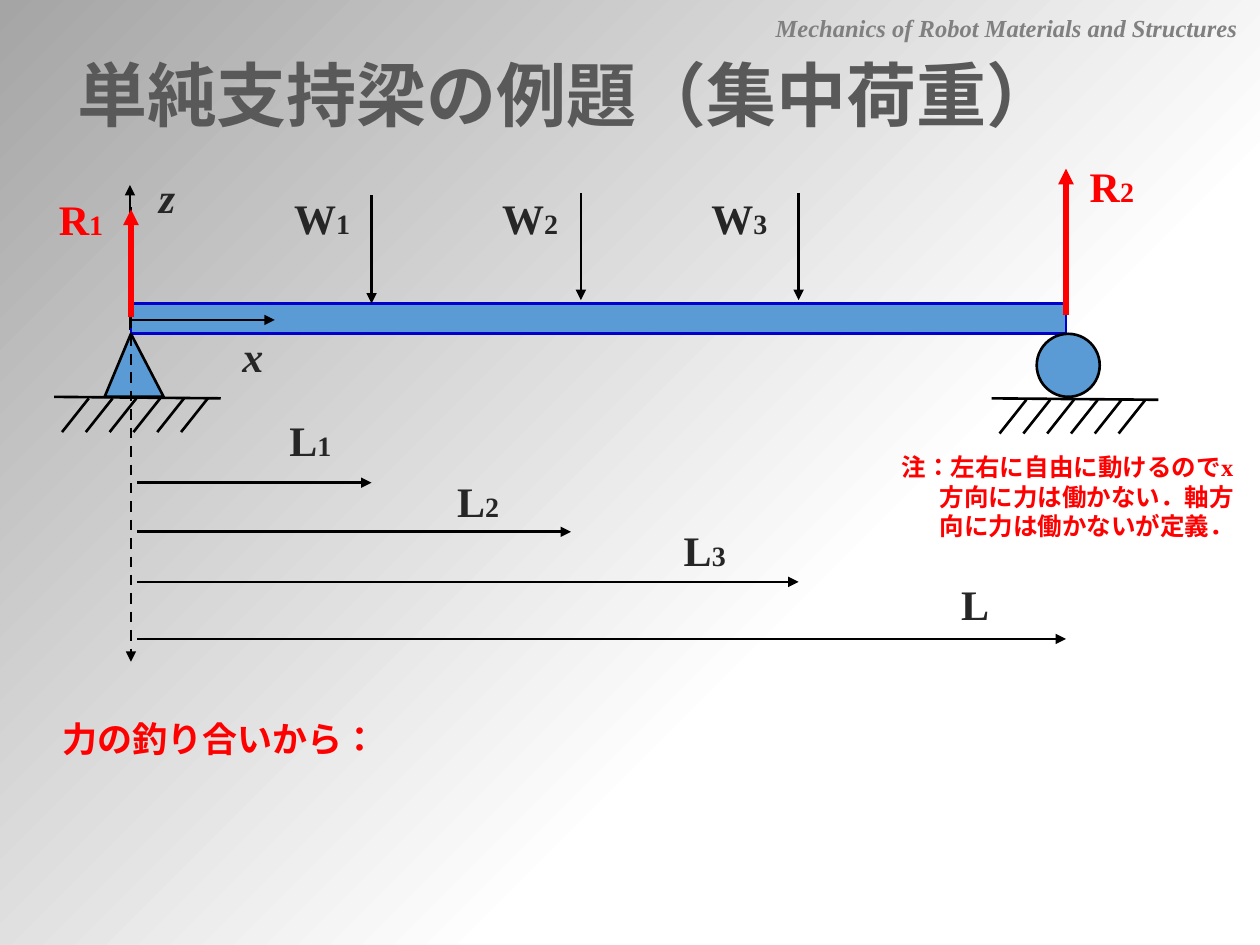
from lxml import etree
from pptx import Presentation
from pptx.dml.color import RGBColor
from pptx.enum.dml import MSO_LINE
from pptx.enum.lang import MSO_LANGUAGE_ID
from pptx.enum.shapes import MSO_CONNECTOR, MSO_SHAPE
from pptx.enum.text import MSO_ANCHOR, MSO_AUTO_SIZE, PP_ALIGN
from pptx.oxml import parse_xml
from pptx.oxml.ns import nsdecls, qn
from pptx.util import Cm, Pt

LEFT, MID, RIGHT = PP_ALIGN.LEFT, PP_ALIGN.CENTER, PP_ALIGN.RIGHT
RECT, OVAL = MSO_SHAPE.RECTANGLE, MSO_SHAPE.OVAL
DASH = MSO_LINE.DASH
STRAIGHT = MSO_CONNECTOR.STRAIGHT
MIDDLE = MSO_ANCHOR.MIDDLE
FIXED = MSO_AUTO_SIZE.NONE
JAPAN = MSO_LANGUAGE_ID.JAPANESE

COLORS = {
    "black": "000000", "ink": "262626", "title": "595959", "head": "808080",
    "red": "FF0000", "steel": "5B9BD5", "edge": "0000CC",
    "white": "FFFFFF", "shade": "A5A5A5",
}


def color(name):
    return RGBColor.from_string(COLORS[name])


class Board:
    """Holds the style and the slide being drawn; all lengths are in cm."""

    font = "Times New Roman"
    thin, thick = 1.5, 3

    def __init__(self, slide):
        self.slide = slide
        self.shapes = slide.shapes

    def back(self):
        """Fade from grey at the top left to white at the bottom right."""
        fill = self.slide.background.fill
        fill.solid()
        solid = self.slide._element.find(".//" + qn("a:solidFill"))
        white, shade = COLORS["white"], COLORS["shade"]
        grad = parse_xml(
            f'<a:gradFill rotWithShape="1" {nsdecls("a")}><a:gsLst>'
            f'<a:gs pos="0"><a:srgbClr val="{white}"><a:alpha val="70000"/></a:srgbClr></a:gs>'
            f'<a:gs pos="35000"><a:srgbClr val="{white}"/></a:gs>'
            f'<a:gs pos="100000"><a:srgbClr val="{shade}"/></a:gs></a:gsLst>'
            '<a:path path="circle"><a:fillToRect l="100000" t="100000"/></a:path>'
            '</a:gradFill>')
        solid.getparent().replace(solid, grad)

    def run(self, para, text, size, hue, face=None, slant=False):
        run = para.add_run()
        run.text = text
        font = run.font
        font.name, font.size = face or self.font, Pt(size)
        font.bold, font.italic = True, slant
        font.color.rgb = color(hue)
        font.language_id = JAPAN

    def title(self, box, text):
        shape = self.shapes.title
        shape.left, shape.top, shape.width, shape.height = map(Cm, box)
        frame = shape.text_frame
        frame.auto_size, frame.vertical_anchor = FIXED, MIDDLE
        para = frame.paragraphs[0]
        para.alignment, para.line_spacing = LEFT, 0.9
        self.run(para, text, 40, "title", "Calibri")

    def text(self, box, align):
        """Add an empty text box and return its paragraph."""
        frame = self.shapes.add_textbox(*map(Cm, box)).text_frame
        frame.word_wrap = True
        para = frame.paragraphs[0]
        para.alignment = align
        return para

    def label(self, x, y, name, sub="", hue="ink"):
        para = self.text((x, y, 1.8, 1.27), RIGHT)
        self.run(para, name, 24, hue)
        if sub:
            self.run(para, sub, 16, hue)

    def axis(self, x, y, name):
        para = self.text((x, y, 1.47, 1.27), RIGHT)
        self.run(para, name, 24, "ink", slant=True)

    def note(self, box, text):
        para = self.text(box, LEFT)
        props = para._p.get_or_add_pPr()
        props.set("marL", str(Cm(0.76)))
        props.set("indent", str(-Cm(0.76)))
        self.run(para, text, 14, "red")

    def paint(self, shape, edge="black"):
        shape.shadow.inherit = False
        shape.fill.solid()
        shape.fill.fore_color.rgb = color("steel")
        shape.line.color.rgb = color(edge)
        shape.line.width = Pt(self.thin)

    def solid(self, kind, box, edge="black"):
        self.paint(self.shapes.add_shape(kind, *map(Cm, box)), edge)

    def wedge(self, start, *points):
        build = self.shapes.build_freeform(*map(Cm, start))
        build.add_line_segments([tuple(map(Cm, p)) for p in points], close=True)
        self.paint(build.convert_to_shape())

    def line(self, start, end, host=None, hue="black", width=thin, dash=None):
        shapes = host or self.shapes
        line = shapes.add_connector(STRAIGHT, *map(Cm, start + end))
        line.line.color.rgb = color(hue)
        line.line.width = Pt(width)
        if dash:
            line.line.dash_style = dash
        etree.SubElement(line._element.spPr, qn("a:effectLst"))
        return line

    def arrow(self, start, end, **style):
        line = self.line(start, end, **style)
        stroke = line._element.spPr.find(qn("a:ln"))
        etree.SubElement(stroke, qn("a:tailEnd"), type="triangle")

    def force(self, x, low, high):
        self.arrow((x, low), (x, high), hue="red", width=self.thick)

    def ground(self, x, y):
        """Draw a hatched floor whose left end is at x, y."""
        host = self.shapes.add_group_shape().shapes
        self.line((x + 3.36, y + 0.03), (x, y), host)
        for i in range(6):
            top = x + 3.1 - 0.48 * i
            self.line((top, y + 0.03), (top - 0.54, y + 0.71), host)


def main():
    deck = Presentation()
    deck.slide_width, deck.slide_height = Cm(25.4), Cm(19.05)
    board = Board(deck.slides.add_slide(deck.slide_layouts[5]))
    board.back()
    board.title((1.3, 1.07, 20.7, 1.83), "単純支持梁の例題（集中荷重）")
    head = board.text((15.29, 0.13, 10.01, 0.86), MID)
    board.run(head, "Mechanics of Robot Materials and Structures", 14, "head", slant=True)

    left, right = 2.64, 21.49
    top, base = 6.12, 6.73
    board.arrow((2.62, 6.65), (2.62, 3.73))
    board.solid(RECT, (left, top, right - left, base - top), "edge")

    board.wedge((left, base), (2.11, 8), (3.3, 8))
    board.ground(1.09, 8)
    board.ground(19.99, 8.03)
    board.solid(OVAL, (20.9, base, 1.27, 1.27))

    loads = [(7.49, 3.94, 6.12, 5.51), (11.71, 3.89, 6.05, 9.7), (16.1, 3.89, 6.05, 13.92)]
    for i, (x, high, low, tag) in enumerate(loads, 1):
        board.arrow((x, high), (x, low))
        board.label(tag, 3.76, "W", str(i))

    board.arrow((left, 4.17), (left, 13.34), dash=DASH)
    spans = [(7.49, 9.73, 5.13, 8.23, "1"), (11.51, 10.72, 8.51, 9.47, "2"),
             (16.1, 11.73, 13.08, 10.44, "3"), (right, 12.88, 18.39, 11.53, "")]
    for end, y, tag, tall, sub in spans:
        board.arrow((2.77, y), (end, y))
        board.label(tag, tall, "L", sub)

    board.force(right, 6.35, 3.4)
    board.force(left, 6.4, 4.22)
    board.label(0.53, 3.78, "R", "1", "red")
    board.label(21.31, 3.12, "R", "2", "red")
    board.arrow((2.62, 6.45), (5.54, 6.45))
    board.axis(4.09, 6.53, "x")
    board.axis(2.31, 3.33, "z")

    board.note((17.93, 8.99, 7.62, 2.06),
               "注：左右に自由に動けるのでx方向に力は働かない．軸方向に力は働かないが定義．")
    lead = board.text((0.97, 14.33, 6.93, 1.12), MID)
    board.run(lead, "力の釣り合いから：", 20, "red")
    deck.save("out.pptx")


if __name__ == "__main__":
    main()
